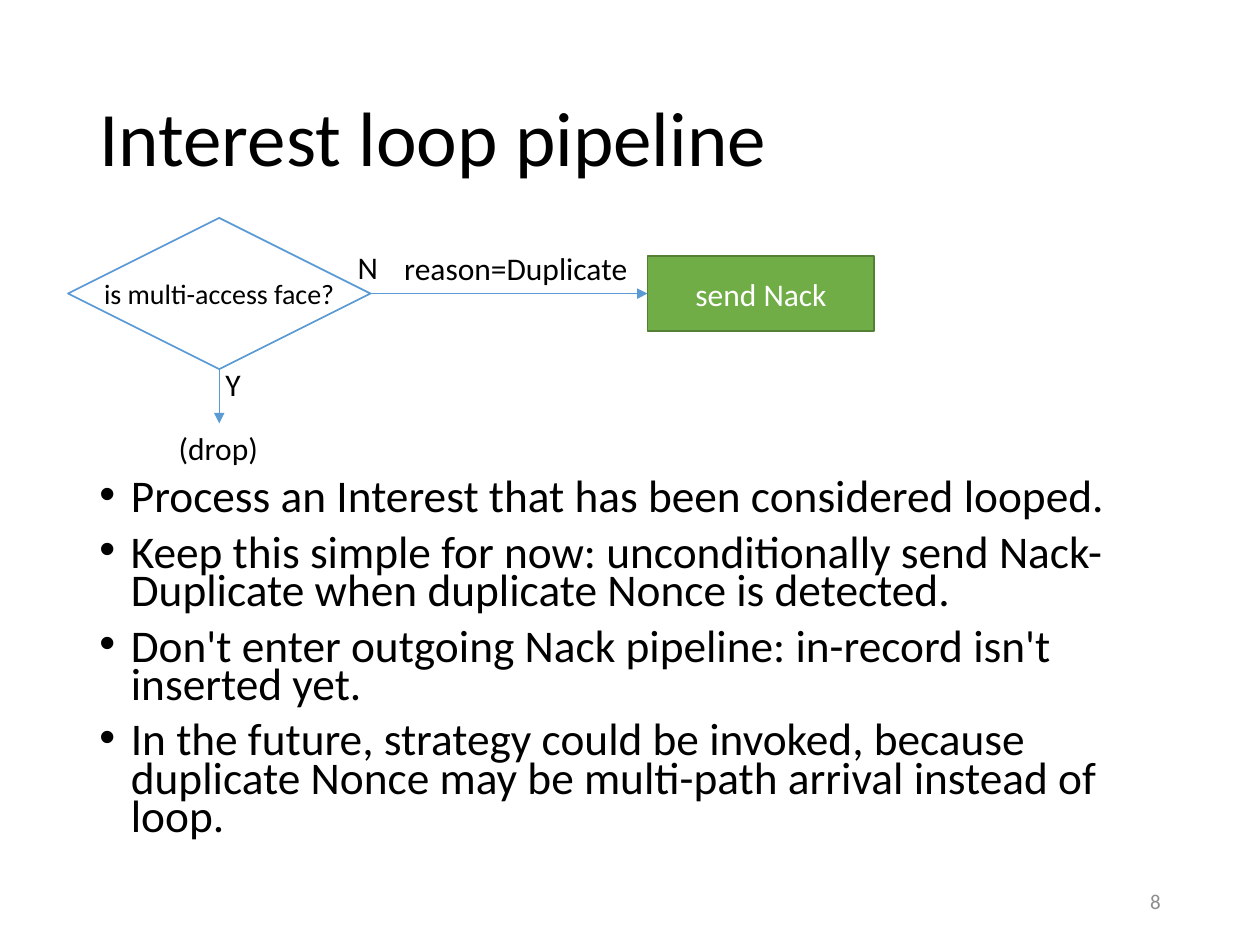
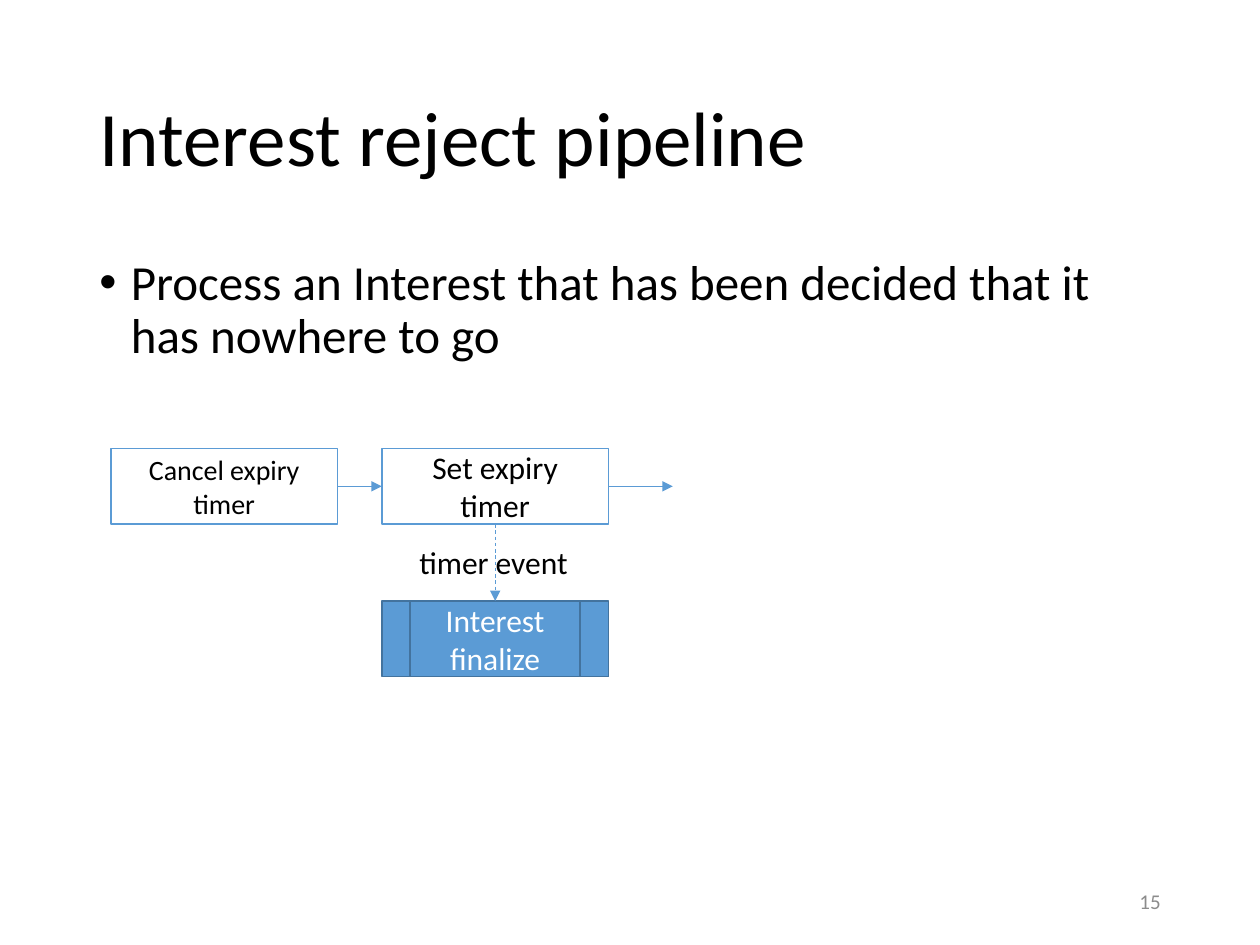
"""Build two slides on the Interest loop and Interest reject pipelines."""
from lxml import etree
from pptx import Presentation
from pptx.dml.color import RGBColor
from pptx.enum.dml import MSO_LINE
from pptx.enum.shapes import MSO_CONNECTOR, MSO_SHAPE
from pptx.enum.text import MSO_ANCHOR, MSO_AUTO_SIZE, PP_ALIGN
from pptx.oxml.ns import qn
from pptx.util import Inches, Pt

RECTANGLE = MSO_SHAPE.RECTANGLE
DECISION = MSO_SHAPE.FLOWCHART_DECISION
SUBPROCESS = MSO_SHAPE.FLOWCHART_PREDEFINED_PROCESS
STRAIGHT = MSO_CONNECTOR.STRAIGHT
DASH = MSO_LINE.DASH
MIDDLE = MSO_ANCHOR.MIDDLE
LEFT, CENTER, RIGHT = PP_ALIGN.LEFT, PP_ALIGN.CENTER, PP_ALIGN.RIGHT
NO_AUTOFIT, GROW = MSO_AUTO_SIZE.NONE, MSO_AUTO_SIZE.SHAPE_TO_FIT_TEXT

FONT = "Calibri"
BLACK, WHITE, GRAY = "000000", "FFFFFF", "8C8C8C"
BLUE, DARK_BLUE = "5B9BD5", "43739E"
GREEN, DARK_GREEN = "70AD47", "538035"
MARGIN, CONTENT_WIDTH = 0.69, 8.62
BOX_WIDTH, BOX_HEIGHT = 1.8, 0.6
LABEL_HEIGHT = 0.4
TOP_SIDE, LEFT_SIDE, BOTTOM_SIDE, RIGHT_SIDE = range(4)


def color(hex_value):
    return RGBColor.from_string(hex_value)


class Deck:
    def __init__(self):
        self.presentation = Presentation()
        self.presentation.slide_width = Inches(10)
        self.presentation.slide_height = Inches(7.5)
        self.slide = None

    def style(self, paragraph, size, text_color=BLACK, alignment=LEFT):
        paragraph.alignment = alignment
        paragraph.font.name = FONT
        paragraph.font.size = Pt(size)
        paragraph.font.color.rgb = color(text_color)

    def add_slide(self, title, number):
        self.slide = self.presentation.slides.add_slide(self.presentation.slide_layouts[5])
        shape = self.slide.shapes.title
        shape.left, shape.top = Inches(MARGIN), Inches(0.4)
        shape.width, shape.height = Inches(CONTENT_WIDTH), Inches(1.45)
        frame = shape.text_frame
        frame.text = title
        frame.auto_size = NO_AUTOFIT
        frame.vertical_anchor = MIDDLE
        frame.paragraphs[0].line_spacing = 0.9
        self.style(frame.paragraphs[0], 44)
        footer = self.text_box(7.06, 6.95, 2.25, LABEL_HEIGHT)
        footer.text = str(number)
        footer.vertical_anchor = MIDDLE
        self.style(footer.paragraphs[0], 12, GRAY, RIGHT)

    def text_box(self, left, top, width, height, wrap=True):
        shape = self.slide.shapes.add_textbox(
            Inches(left), Inches(top), Inches(width), Inches(height))
        shape.text_frame.word_wrap = wrap
        return shape.text_frame

    def label(self, text, left, top, width):
        frame = self.text_box(left, top, width, LABEL_HEIGHT, wrap=False)
        frame.auto_size = GROW
        frame.text = text
        self.style(frame.paragraphs[0], 18)

    def bullets(self, items, top, height, size, line_spacing):
        frame = self.text_box(MARGIN, top, CONTENT_WIDTH, height)
        frame.text = "\n".join(items)
        for paragraph in frame.paragraphs:
            paragraph.line_spacing = line_spacing
            paragraph.space_before = Pt(10)
            self.style(paragraph, size)
            properties = paragraph._p.get_or_add_pPr()
            properties.set("marL", str(Inches(0.25)))
            properties.set("indent", str(-Inches(0.25)))
            bullet_font = etree.Element(qn("a:buFont"), typeface="Arial")
            bullet = etree.Element(qn("a:buChar"), char="•")
            defaults = properties.find(qn("a:defRPr"))
            defaults.addprevious(bullet_font)
            defaults.addprevious(bullet)

    def node(self, text, left, top, kind=RECTANGLE, width=BOX_WIDTH, height=BOX_HEIGHT,
             size=18, fill=WHITE, line=BLUE, text_color=BLACK, wrap=True):
        shape = self.slide.shapes.add_shape(
            kind, Inches(left), Inches(top), Inches(width), Inches(height))
        shape.shadow.inherit = False
        shape.fill.solid()
        shape.fill.fore_color.rgb = color(fill)
        shape.line.color.rgb = color(line)
        shape.line.width = Pt(1)
        frame = shape.text_frame
        frame.word_wrap = wrap
        frame.vertical_anchor = MIDDLE
        frame.text = text
        self.style(frame.paragraphs[0], size, text_color, CENTER)
        return shape

    def arrow(self, start, end, source, source_side, target=None, target_side=None, dash=None):
        connector = self.slide.shapes.add_connector(
            STRAIGHT, *(Inches(value) for value in (*start, *end)))
        connector.begin_connect(source, source_side)
        if target is not None:
            connector.end_connect(target, target_side)
        connector.line.color.rgb = color(BLUE)
        connector.line.width = Pt(0.5)
        if dash is not None:
            connector.line.dash_style = dash
        etree.SubElement(connector.line._get_or_add_ln(), qn("a:tailEnd"), type="triangle")
        etree.SubElement(connector._element.spPr, qn("a:effectLst"))


def build_loop_slide(deck):
    deck.add_slide("Interest loop pipeline", 8)
    deck.bullets([
        "Process an Interest that has been considered looped.",
        "Keep this simple for now: unconditionally send Nack-Duplicate "
        "when duplicate Nonce is detected.",
        "Don't enter outgoing Nack pipeline: in-record isn't inserted yet.",
        "In the future, strategy could be invoked, because duplicate Nonce "
        "may be multi-path arrival instead of loop.",
    ], top=3.78, height=2.98, size=25.9, line_spacing=0.7)
    decision = deck.node("is multi-access face?", 0.54, 1.73, DECISION,
                         width=2.4, height=1.2, size=16, wrap=False)
    send_nack = deck.node("send Nack", 5.14, 2.03, fill=GREEN, line=DARK_GREEN,
                          text_color=WHITE)
    deck.arrow((2.94, 2.33), (5.14, 2.33), decision, RIGHT_SIDE, send_nack, LEFT_SIDE)
    deck.arrow((1.74, 2.93), (1.74, 3.36), decision, BOTTOM_SIDE)
    deck.label("reason=Duplicate", 3.11, 1.93, 1.99)
    deck.label("(drop)", 1.32, 3.36, 0.84)
    deck.label("N", 2.74, 1.92, 0.36)
    deck.label("Y", 1.69, 2.85, 0.32)


def build_reject_slide(deck):
    deck.add_slide("Interest reject pipeline", 15)
    deck.bullets(["Process an Interest that has been decided that it has nowhere to go"],
                 top=2, height=4.76, size=28, line_spacing=0.9)
    cancel_timer = deck.node("Cancel expiry timer", 0.88, 3.56, size=16)
    set_timer = deck.node("Set expiry timer", 3.03, 3.56)
    finalize = deck.node("Interest finalize", 3.03, 4.77, SUBPROCESS,
                         fill=BLUE, line=DARK_BLUE, text_color=WHITE)
    deck.arrow((2.68, 3.86), (3.03, 3.86), cancel_timer, RIGHT_SIDE, set_timer, LEFT_SIDE)
    deck.arrow((3.93, 4.16), (3.93, 4.77), set_timer, BOTTOM_SIDE, finalize, TOP_SIDE, DASH)
    deck.arrow((4.83, 3.86), (5.34, 3.86), set_timer, RIGHT_SIDE)
    deck.label("timer event", 3.23, 4.26, 1.4)


def main():
    deck = Deck()
    build_loop_slide(deck)
    build_reject_slide(deck)
    deck.presentation.save("out.pptx")


if __name__ == "__main__":
    main()
